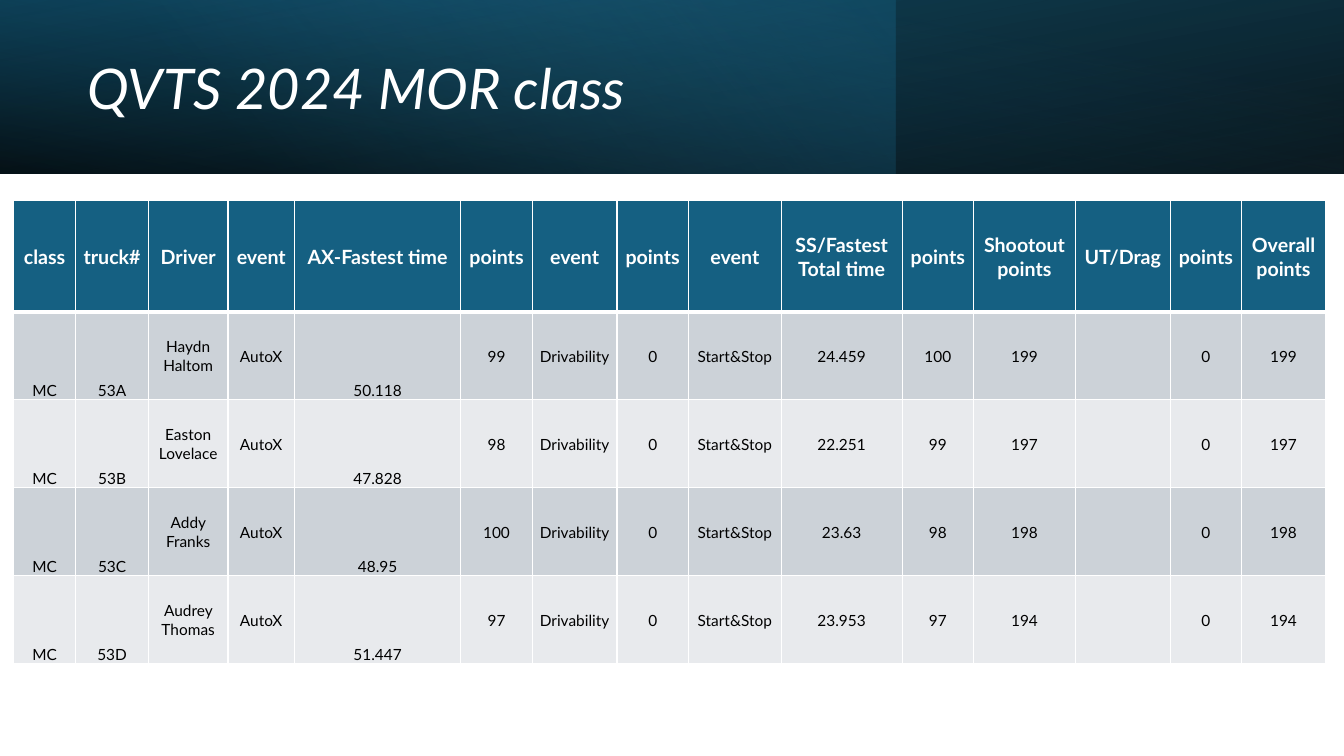
"""Build the QVTS 2024 MOR class results slide."""
import pptx
import pptx.dml.color
import pptx.enum.shapes
import pptx.enum.text
import pptx.oxml
import pptx.oxml.ns
import pptx.util

TITLE = "QVTS 2024 MOR class"
COLUMNS = [
    ("class", 44.6), ("truck#", 51.8), ("Driver", 56.9), ("event", 47.5),
    ("AX-Fastest time", 118.8), ("points", 51.1), ("event", 60.5),
    ("points", 51.1), ("event", 66.2), ("SS/Fastest Total time", 86.4),
    ("points", 51.1), ("Shootout points", 72.7), ("UT/Drag", 67.7),
    ("points", 51.1), ("Overall points", 59.8),
]
RESULTS = [
    ("53A", "Haydn Haltom", "50.118", "99", "24.459", "100", "199"),
    ("53B", "Easton Lovelace", "47.828", "98", "22.251", "99", "197"),
    ("53C", "Addy Franks", "48.95", "100", "23.63", "98", "198"),
    ("53D", "Audrey Thomas", "51.447", "97", "23.953", "97", "194"),
]
BOTTOM_COLUMNS = {0, 1, 4}

THEME = {
    "font": "Lato", "title_size": 40, "header_size": 14, "body_size": 11,
    "white": "FFFFFF", "black": "000000", "header": "156082",
    "bands": ("CCD2D8", "E8EAED"),
    "deep_teal": "104862", "teal": "156082", "sky": "46B1E1",
}

SLIDE_WIDTH, SLIDE_HEIGHT = 960, 540
BANNER_HEIGHT = 124
TITLE_BOX = (55.4, 19.4, 555.8, 91.4)
TABLE_LEFT, TABLE_TOP = 9.6, 143.5
HEADER_HEIGHT, ROW_HEIGHT = 79.2, 62.9
CELL_INSET = 0.7
THIN, THICK = 1, 3

BANNER_LAYERS = [
    {"width": SLIDE_WIDTH, "angle": 100, "rotation": 180, "flip": True,
     "stops": [(0, THEME["black"], 96), (100, THEME["deep_teal"], 100)]},
    {"width": 640, "angle": 140, "rotation": 0, "flip": False,
     "stops": [(0, THEME["teal"], 41), (74, THEME["sky"], 0)]},
    {"width": SLIDE_WIDTH, "angle": 260, "rotation": 0, "flip": True,
     "stops": [(0, THEME["black"], 63), (78, THEME["teal"], 15)]},
]

Pt = pptx.util.Pt
ANCHOR = pptx.enum.text.MSO_ANCHOR
ALIGN = pptx.enum.text.PP_ALIGN
NAMESPACE = pptx.oxml.ns.nsdecls("a")


def rgb(color):
    return pptx.dml.color.RGBColor.from_string(color)


def write_text(frame, text, *, size, color, bold=False, italic=False,
               align=ALIGN.LEFT, spacing=None):
    frame.word_wrap = True
    paragraph = frame.paragraphs[0]
    paragraph.alignment = align
    paragraph.line_spacing = spacing
    run = paragraph.add_run()
    run.text = text
    run.font.name = THEME["font"]
    run.font.size = Pt(size)
    run.font.bold = bold
    run.font.italic = italic
    run.font.color.rgb = rgb(color)


def add_banner_layer(slide, layer):
    shape = slide.shapes.add_shape(
        pptx.enum.shapes.MSO_SHAPE.RECTANGLE,
        0, 0, Pt(layer["width"]), Pt(BANNER_HEIGHT))
    shape.shadow.inherit = False
    shape.line.fill.background()
    shape.rotation = layer["rotation"]
    properties = shape.element.spPr
    if layer["flip"]:
        properties.find(pptx.oxml.ns.qn("a:xfrm")).set("flipH", "1")
    stops = "".join(
        f'<a:gs pos="{position * 1000}"><a:srgbClr val="{color}">'
        f'<a:alpha val="{opacity * 1000}"/></a:srgbClr></a:gs>'
        for position, color, opacity in layer["stops"])
    gradient = pptx.oxml.parse_xml(
        f'<a:gradFill {NAMESPACE} rotWithShape="1"><a:gsLst>{stops}</a:gsLst>'
        f'<a:lin ang="{layer["angle"] * 60000}" scaled="0"/></a:gradFill>')
    shape.fill.background()
    properties.replace(properties.find(pptx.oxml.ns.qn("a:noFill")), gradient)


def add_title(slide):
    box = slide.shapes.add_textbox(*map(Pt, TITLE_BOX))
    box.text_frame.vertical_anchor = ANCHOR.MIDDLE
    write_text(box.text_frame, TITLE, size=THEME["title_size"],
               color=THEME["white"], italic=True, spacing=0.9)


def set_borders(cell, top, bottom):
    properties = cell._tc.get_or_add_tcPr()
    for side, width in (("L", THIN), ("R", THIN), ("T", top), ("B", bottom)):
        properties.append(pptx.oxml.parse_xml(
            f'<a:ln{side} {NAMESPACE} w="{Pt(width)}"><a:solidFill>'
            f'<a:srgbClr val="{THEME["white"]}"/></a:solidFill></a:ln{side}>'))


def style_cell(cell, fill, top, bottom, anchor):
    set_borders(cell, top, bottom)
    cell.fill.solid()
    cell.fill.fore_color.rgb = rgb(fill)
    cell.margin_left = cell.margin_right = cell.margin_top = Pt(CELL_INSET)
    cell.margin_bottom = 0
    cell.vertical_anchor = anchor


def result_row(truck, driver, autox_time, autox_points, stop_time, stop_points, total):
    return ("MC", truck, driver, "AutoX", autox_time, autox_points,
            "Drivability", "0", "Start&Stop", stop_time, stop_points,
            total, "", "0", total)


def add_results_table(slide):
    rows = [[name for name, width in COLUMNS]]
    rows += [result_row(*result) for result in RESULTS]
    table_width = sum(width for name, width in COLUMNS)
    table_height = HEADER_HEIGHT + ROW_HEIGHT * len(RESULTS)
    table = slide.shapes.add_table(
        len(rows), len(COLUMNS), Pt(TABLE_LEFT), Pt(TABLE_TOP),
        Pt(table_width), Pt(table_height)).table
    table.horz_banding = False
    for column, (name, width) in zip(table.columns, COLUMNS):
        column.width = Pt(width)
    for row_index, values in enumerate(rows):
        is_header = row_index == 0
        table.rows[row_index].height = Pt(HEADER_HEIGHT if is_header else ROW_HEIGHT)
        fill = THEME["header"] if is_header else THEME["bands"][(row_index - 1) % 2]
        for column_index, value in enumerate(values):
            cell = table.cell(row_index, column_index)
            at_bottom = not is_header and column_index in BOTTOM_COLUMNS
            style_cell(cell, fill,
                       top=THICK if row_index == 1 else THIN,
                       bottom=THICK if is_header else THIN,
                       anchor=ANCHOR.BOTTOM if at_bottom else ANCHOR.MIDDLE)
            if value:
                write_text(cell.text_frame, value, bold=is_header, align=ALIGN.CENTER,
                           size=THEME["header_size" if is_header else "body_size"],
                           color=THEME["white" if is_header else "black"])


def main():
    presentation = pptx.Presentation()
    presentation.slide_width = Pt(SLIDE_WIDTH)
    presentation.slide_height = Pt(SLIDE_HEIGHT)
    slide = presentation.slides.add_slide(presentation.slide_layouts[6])
    for layer in BANNER_LAYERS:
        add_banner_layer(slide, layer)
    add_title(slide)
    add_results_table(slide)
    presentation.save("out.pptx")


if __name__ == "__main__":
    main()
